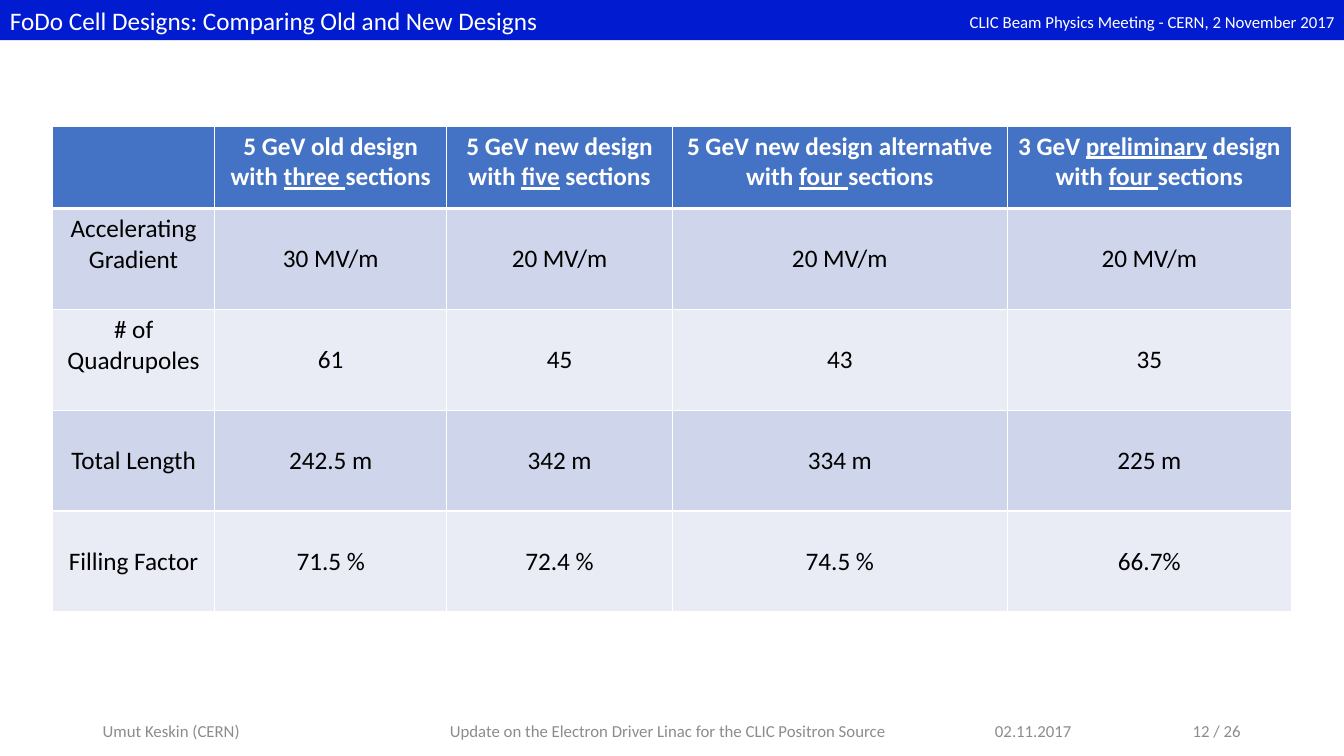
from lxml import etree
from pptx import Presentation
from pptx.dml.color import RGBColor
from pptx.enum import shapes, text
from pptx.oxml import ns
from pptx.util import Inches, Pt

WHITE = RGBColor(0xFF, 0xFF, 0xFF)
BLACK = RGBColor(0, 0, 0)
GREY = RGBColor(0x8C, 0x8C, 0x8C)
BAR_BLUE = RGBColor(0x00, 0x1B, 0xD0)
HEAD_BLUE = RGBColor(0x44, 0x72, 0xC4)
BANDS = [RGBColor(0xCF, 0xD5, 0xEA), RGBColor(0xE9, 0xEB, 0xF5)]
LEFT, CENTER, RIGHT = (text.PP_ALIGN.LEFT, text.PP_ALIGN.CENTER,
                       text.PP_ALIGN.RIGHT)
MIDDLE, TOP = text.MSO_ANCHOR.MIDDLE, text.MSO_ANCHOR.TOP


def write(frame, pieces, align, **formats):
    """Fill one paragraph; every second piece is underlined."""
    frame.word_wrap = True
    para = frame.paragraphs[0]
    para.alignment = align
    for index, piece in enumerate(pieces):
        span = para.add_run()
        span.text = piece
        span.font.color.rgb = formats["color"]
        settings = {"name": "Calibri", "size": Pt(formats["size"]),
                    "bold": formats.get("bold", False),
                    "underline": index % 2 == 1}
        for name, value in settings.items():
            setattr(span.font, name, value)
    return para


def set_border(cell, side, points):
    line = etree.Element(ns.qn(f"a:ln{side}"), w=str(Pt(points)))
    fill = etree.SubElement(line, ns.qn("a:solidFill"))
    etree.SubElement(fill, ns.qn("a:srgbClr"), val=str(WHITE))
    cell._tc.get_or_add_tcPr().append(line)


deck = Presentation()
deck.slide_width, deck.slide_height = Inches(13.33), Inches(7.5)
page = deck.slides.add_slide(deck.slide_layouts[6])

# Title bar
bar = page.shapes.add_shape(shapes.MSO_SHAPE.RECTANGLE, 0, 0,
                            deck.slide_width, Inches(0.4))
bar.shadow.inherit = False
bar.fill.solid()
bar.fill.fore_color.rgb = BAR_BLUE
bar.line.fill.background()
bar.text_frame.vertical_anchor = MIDDLE
write(bar.text_frame, ["FoDo Cell Designs: Comparing Old and New Designs"],
      LEFT, size=18, color=WHITE)

# Meeting name and footer
labels = [
    (8.84, 0.06, 4.5, 0.31, RIGHT, WHITE,
     "CLIC Beam Physics Meeting - CERN, 2 November 2017"),
    (0.92, 7.05, 3, 0.4, LEFT, GREY, "Umut Keskin (CERN)"),
    (4.33, 7.05, 4.59, 0.4, CENTER, GREY,
     "Update on the Electron Driver Linac for the CLIC Positron Source"),
    (9.77, 7.05, 2.75, 0.4, LEFT, GREY, "02.11.2017\t12 / 26"),
]
for left, top, width, height, align, color, words in labels:
    box = page.shapes.add_textbox(Inches(left), Inches(top),
                                  Inches(width), Inches(height))
    box.text_frame.vertical_anchor = MIDDLE
    para = write(box.text_frame, [words], align, size=12, color=color)
    if "\t" in words:
        # Tab stop for the page number
        stops = etree.SubElement(para._p.get_or_add_pPr(), ns.qn("a:tabLst"))
        etree.SubElement(stops, ns.qn("a:tab"), pos=str(Inches(1.96)), algn="l")

# Comparison table
rows = [
    [[], ["5 GeV old design with ", "three ", "sections"],
     ["5 GeV new design with ", "five", " sections"],
     ["5 GeV new design alternative with ", "four ", "sections"],
     ["3 GeV ", "preliminary", " design with ", "four ", "sections"]],
    [["Accelerating Gradient"], ["30 MV/m"], ["20 MV/m"], ["20 MV/m"],
     ["20 MV/m"]],
    [["# of Quadrupoles"], ["61"], ["45"], ["43"], ["35"]],
    [["Total Length"], ["242.5 m"], ["342 m"], ["334 m"], ["225 m"]],
    [["Filling Factor"], ["71.5 %"], ["72.4 %"], ["74.5 %"], ["66.7%"]],
]
column_widths = [1.61, 2.3, 2.24, 3.32, 2.82]
row_heights = [0.82, 1, 1, 1, 1]
table = page.shapes.add_table(len(rows), len(column_widths), Inches(0.52),
                              Inches(1.25), Inches(sum(column_widths)),
                              Inches(sum(row_heights))).table
for column, width in zip(table.columns, column_widths):
    column.width = Inches(width)
for r, (row, height) in enumerate(zip(rows, row_heights)):
    table.rows[r].height = Inches(height)
    is_head = r == 0
    for c, pieces in enumerate(row):
        cell = table.cell(r, c)
        two_lines = is_head or (c == 0 and r < 3)
        cell.vertical_anchor = TOP if two_lines else MIDDLE
        write(cell.text_frame, pieces, CENTER, size=18, bold=is_head,
              color=WHITE if is_head else BLACK)
        for side in "LRTB":
            under_head = (r, side) in [(0, "B"), (1, "T")]
            set_border(cell, side, 3 if under_head else 1)
        cell.fill.solid()
        cell.fill.fore_color.rgb = HEAD_BLUE if is_head else BANDS[(r - 1) % 2]

deck.save("out.pptx")
